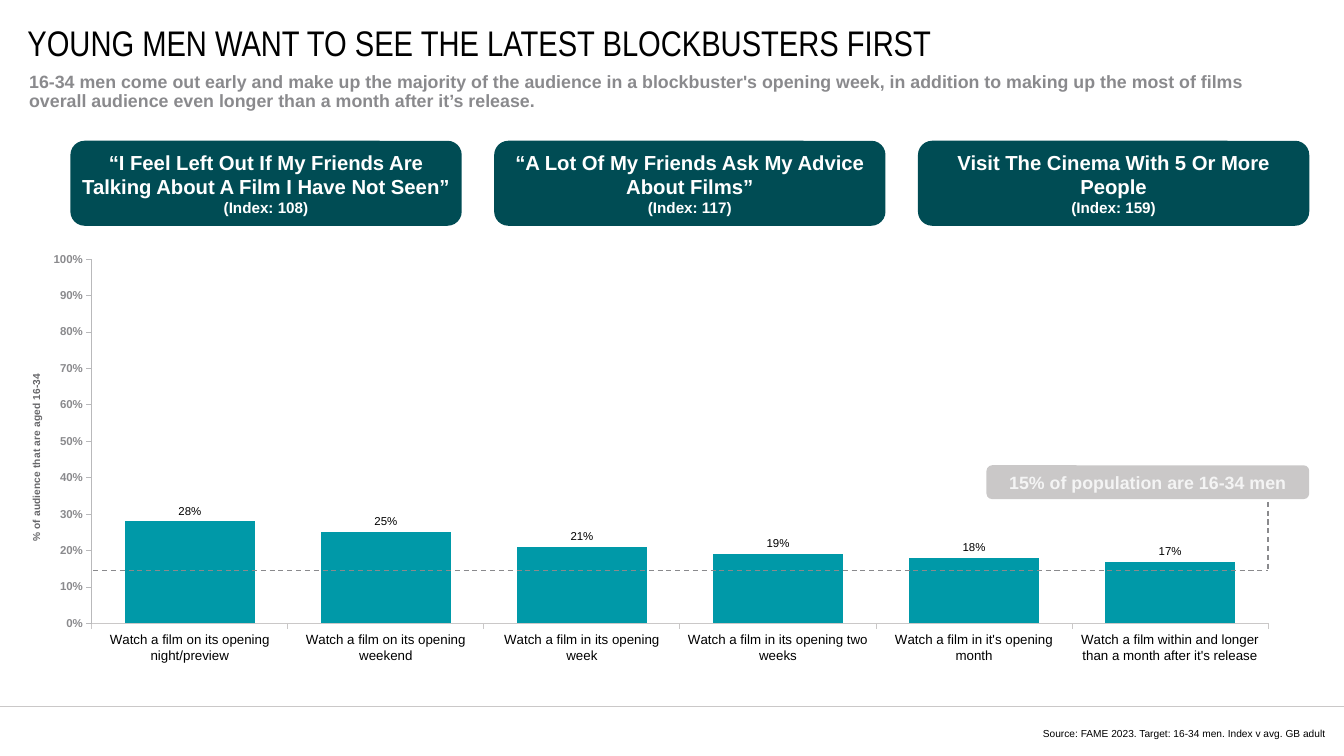
"""Build the cinema audience slide with three index cards and a column chart."""
from lxml import etree
from pptx import Presentation
from pptx.chart import data
from pptx.dml import color
from pptx.enum import chart as ec, dml, shapes, text
from pptx.oxml import ns
from pptx.util import Inches, Pt

TITLE = "YOUNG MEN WANT TO SEE THE LATEST BLOCKBUSTERS FIRST"
SUBTITLE = ("16-34 men come out early and make up the majority of the audience in a "
            "blockbuster's opening week, in addition to making up the most of films "
            "overall audience even longer than a month after it’s release.")
CARDS = [
    ("“I Feel Left Out If My Friends Are Talking About A Film I Have Not Seen”", 108),
    ("“A Lot Of My Friends Ask My Advice About Films”", 117),
    ("Visit The Cinema With 5 Or More People", 159),
]
AUDIENCE = [
    ("Watch a film on its opening night/preview", 0.28),
    ("Watch a film on its opening weekend", 0.25),
    ("Watch a film in its opening week", 0.21),
    ("Watch a film in its opening two weeks", 0.19),
    ("Watch a film in it's opening month", 0.18),
    ("Watch a film within and longer than a month after it's release", 0.17),
]
AXIS_TITLE = "% of audience that are aged 16-34"
POPULATION = "15% of population are 16-34 men"
SOURCE = "Source: FAME 2023. Target: 16-34 men. Index v avg. GB adult"
COLORS = {"black": "000000", "white": "FFFFFF", "card": "004C54", "bar": "0099A8",
          "grey": "8A8A8D", "rule": "CAC8C8", "axis": "B9B9BB", "axis_title": "67676A",
          "pale": "F4F4F4"}
PLOT = {"x": 0.051, "y": 0.031, "w": 0.931, "h": 0.848}
CARD_LEFT, CARD_STEP = 0.77, 4.635
LINE_LEFT, LINE_RIGHT, LINE_Y = 1.02, 13.87, 6.24


def rgb(name):
    return color.RGBColor.from_string(COLORS[name])


def style(font, size, name, bold=False, face="Arial"):
    font.size, font.bold, font.name = Pt(size), bold, face
    font.color.rgb = rgb(name)


def write(sp, lines, name, bold=False, face="Arial", align=text.PP_ALIGN.LEFT,
          anchor=text.MSO_ANCHOR.TOP, spacing=None, inset=None):
    tf = sp.text_frame
    tf.word_wrap, tf.vertical_anchor = True, anchor
    tf.auto_size = text.MSO_AUTO_SIZE.NONE
    if inset is not None:
        tf.margin_left = tf.margin_right = tf.margin_top = tf.margin_bottom = Inches(inset)
    tf.text = "\n".join(line for line, size in lines)
    for p, (line, size) in zip(tf.paragraphs, lines):
        p.alignment = align
        if spacing:
            p.line_spacing = Pt(spacing)
        for r in p.runs:
            style(r.font, size, name, bold, face)


def add_text(s, box, lines, name, **options):
    write(s.shapes.add_textbox(*map(Inches, box)), lines, name, **options)


def add_box(s, box, fill, lines, name, **options):
    sp = s.shapes.add_shape(shapes.MSO_SHAPE.ROUNDED_RECTANGLE, *map(Inches, box))
    sp.shadow.inherit = False
    sp.fill.solid()
    sp.fill.fore_color.rgb = rgb(fill)
    sp.line.fill.background()
    write(sp, lines, name, bold=True, align=text.PP_ALIGN.CENTER,
          anchor=text.MSO_ANCHOR.MIDDLE, **options)


def add_line(s, ends, name, width, dash=None):
    cx = s.shapes.add_connector(shapes.MSO_CONNECTOR.STRAIGHT, *map(Inches, ends))
    cx.line.color.rgb = rgb(name)
    cx.line.width = Pt(width)
    if dash:
        cx.line.dash_style = dash
    etree.SubElement(cx._element.spPr, ns.qn("a:effectLst"))


def set_plot_layout(chart):
    plot_area = chart._chartSpace.chart.plotArea
    for old in plot_area.findall(ns.qn("c:layout")):
        plot_area.remove(old)
    layout = etree.Element(ns.qn("c:layout"))
    manual = etree.SubElement(layout, ns.qn("c:manualLayout"))
    settings = {"layoutTarget": "inner", "xMode": "edge", "yMode": "edge", **PLOT}
    for tag, value in settings.items():
        etree.SubElement(manual, ns.qn("c:" + tag)).set("val", str(value))
    plot_area.insert(0, layout)


def format_axis(axis, size, name, line, bold=False):
    axis.has_major_gridlines = False
    axis.major_tick_mark = ec.XL_TICK_MARK.OUTSIDE
    axis.minor_tick_mark = ec.XL_TICK_MARK.NONE
    style(axis.tick_labels.font, size, name, bold)
    axis.format.line.color.rgb = rgb(line)
    axis.format.line.width = Pt(0.75)


def add_audience_chart(s):
    cd = data.CategoryChartData(number_format="0%")
    cd.categories = [label for label, share in AUDIENCE]
    cd.add_series("Series 1", [share for label, share in AUDIENCE])
    box = map(Inches, (0.3, 2.69, 13.82, 4.7))
    chart = s.shapes.add_chart(ec.XL_CHART_TYPE.COLUMN_CLUSTERED, *box, cd).chart
    chart.has_legend = chart.has_title = False
    style(chart.font, 10, "black")
    set_plot_layout(chart)

    format_axis(chart.category_axis, 10.5, "black", "rule")
    va = chart.value_axis
    format_axis(va, 9, "grey", "axis", bold=True)
    va.minimum_scale, va.maximum_scale, va.major_unit = 0, 1, 0.1
    va.tick_labels.number_format = "0%"
    va.tick_labels.number_format_is_linked = False
    va.axis_title.text_frame.text = AXIS_TITLE
    style(va.axis_title.text_frame.paragraphs[0].runs[0].font, 8, "axis_title", True)

    plot = chart.plots[0]
    plot.gap_width, plot.vary_by_categories = 50, False
    fill = plot.series[0].format.fill
    fill.solid()
    fill.fore_color.rgb = rgb("bar")
    plot.has_data_labels = True
    labels = plot.data_labels
    labels.show_value = True
    labels.number_format, labels.number_format_is_linked = "0%", False
    labels.position = ec.XL_LABEL_POSITION.OUTSIDE_END
    style(labels.font, 9, "black")


def main():
    prs = Presentation()
    prs.slide_width, prs.slide_height = Inches(14.7), Inches(8.27)
    s = prs.slides.add_slide(prs.slide_layouts[5])

    title = s.shapes.title
    title.left, title.top, title.width, title.height = map(Inches, (0.3, 0.3, 13.58, 0.32))
    write(title, [(TITLE, 28)], "black", face="Arial Narrow",
          anchor=text.MSO_ANCHOR.MIDDLE, inset=0)
    add_text(s, (0.22, 0.75, 13.82, 0.48), [(SUBTITLE, 14)], "grey", bold=True, spacing=15)

    add_line(s, (0, 7.73, 14.7, 7.73), "rule", 0.5)
    add_audience_chart(s)
    add_box(s, (10.79, 5.09, 3.53, 0.37), "rule", [(POPULATION, 14)], "pale")
    dash = dml.MSO_LINE.DASH
    add_line(s, (LINE_LEFT, LINE_Y, LINE_RIGHT, LINE_Y), "grey", 1, dash)
    add_line(s, (LINE_RIGHT, 5.49, LINE_RIGHT, LINE_Y), "grey", 1, dash)

    for i, (statement, index) in enumerate(CARDS):
        add_box(s, (CARD_LEFT + i * CARD_STEP, 1.54, 4.28, 0.93), "card",
                [(statement, 16), (f"(Index: {index})", 12)], "white", inset=0)

    add_text(s, (11.24, 7.92, 3.36, 0.21), [(SOURCE, 8)], "black",
             align=text.PP_ALIGN.RIGHT, spacing=8.4)
    prs.save("out.pptx")


if __name__ == "__main__":
    main()
